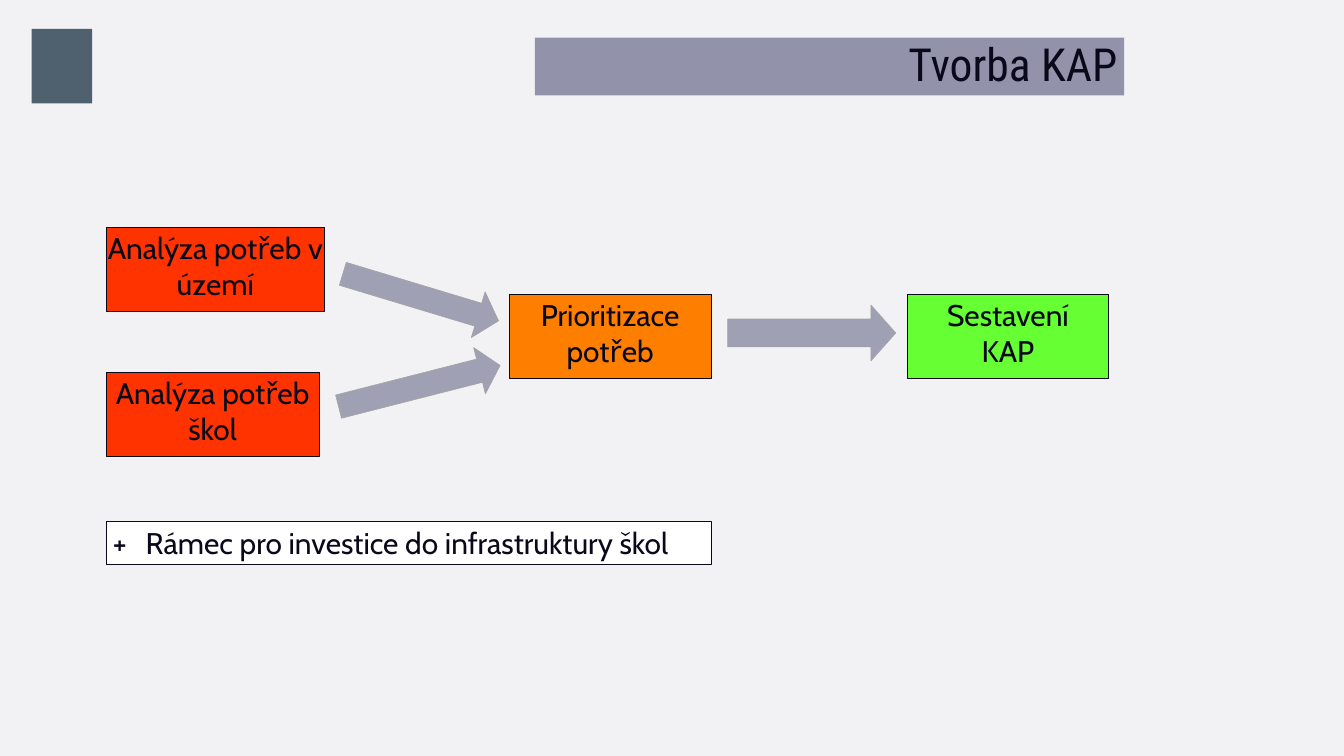
from lxml import etree
from pptx import Presentation
from pptx.dml.color import RGBColor
from pptx.enum import shapes, text
from pptx.oxml.ns import qn
from pptx.util import Inches, Pt

INK = RGBColor(0x0A, 0x09, 0x1B)
PAPER = RGBColor(0xF2, 0xF2, 0xF5)
WHITE = RGBColor(0xFF, 0xFF, 0xFF)
SLATE = RGBColor(0x4F, 0x60, 0x6E)
LAVENDER = RGBColor(0x92, 0x92, 0xAB)
RED = RGBColor(0xFF, 0x33, 0x00)
ORANGE = RGBColor(0xFE, 0x7F, 0x00)
GREEN = RGBColor(0x66, 0xFF, 0x33)
ARROW = RGBColor(0x6A, 0x6A, 0x8A)
ARROW_EDGE = RGBColor(0xA5, 0xA5, 0xA5)

LEFT, MIDDLE, RIGHT = 1.58, 7.58, 13.5
STEP_HEIGHT = 1.25
STEP_INSETS = (0, 0.04, 0, 0.01)
DEFAULT_INSETS = (0.1, 0.05, 0.1, 0.05)

# paragraphs, left, top, width, fill, line width
STEPS = [
    (["Analýza potřeb v území"], LEFT, 3.38, 3.25, RED, 1),
    (["Analýza potřeb škol"], LEFT, 5.54, 3.17, RED, 0.75),
    (["Prioritizace potřeb"], MIDDLE, 4.38, 3, ORANGE, 0.75),
    (["Sestavení", "KAP"], RIGHT, 4.38, 3, GREEN, 0.75),
]
# left, top, width, height, rotation
ARROWS = [
    (5.05, 4.07, 2.42, 0.71, 16.8),
    (5, 5.39, 2.48, 0.71, 345.7),
    (10.83, 4.54, 2.5, 0.83, 0),
]


def add_block(s, kind, box, fill, line=None, line_width=0.75):
    sp = s.shapes.add_shape(kind, *(Inches(v) for v in box))
    sp.shadow.inherit = False
    sp.fill.solid()
    sp.fill.fore_color.rgb = fill
    if line is None:
        sp.line.fill.background()
    else:
        sp.line.color.rgb = line
        sp.line.width = Pt(line_width)
    return sp


def write(sp, paragraphs, font="Cabin", size=32, align=text.PP_ALIGN.CENTER,
          anchor=text.MSO_ANCHOR.TOP, insets=DEFAULT_INSETS,
          spacing=None, before=None):
    tf = sp.text_frame
    tf.word_wrap = True
    tf.vertical_anchor = anchor
    (tf.margin_left, tf.margin_top,
     tf.margin_right, tf.margin_bottom) = (Inches(v) for v in insets)
    for i, words in enumerate(paragraphs):
        p = tf.add_paragraph() if i else tf.paragraphs[0]
        p.alignment = align
        if spacing is not None:
            p.line_spacing = spacing
        if before is not None:
            p.space_before = Pt(before)
        r = p.add_run()
        r.text = words
        r.font.name = font
        r.font.size = Pt(size)
        r.font.color.rgb = INK
    return tf


def add_tab_stop(p, position):
    tabs = etree.SubElement(p._p.get_or_add_pPr(), qn("a:tabLst"))
    etree.SubElement(tabs, qn("a:tab"), pos=str(Inches(position)), algn="l")


def set_opacity(sp, percent):
    color = sp.fill._xPr.find(qn("a:solidFill"))[0]
    etree.SubElement(color, qn("a:alpha"), val=str(percent * 1000))


def main():
    prs = Presentation()
    prs.slide_width, prs.slide_height = Inches(20), Inches(11.25)
    s = prs.slides.add_slide(prs.slide_layouts[6])
    s.background.fill.solid()
    s.background.fill.fore_color.rgb = PAPER
    rect = shapes.MSO_SHAPE.RECTANGLE

    add_block(s, rect, (0.47, 0.43, 0.9, 1.11), SLATE)  # logo placeholder

    title = add_block(s, rect, (7.96, 0.56, 8.77, 0.86), LAVENDER)
    write(title, ["Tvorba KAP"], font="Roboto Condensed", size=48.8,
          align=text.PP_ALIGN.RIGHT, anchor=text.MSO_ANCHOR.MIDDLE, spacing=0.9)

    for paragraphs, left, top, width, fill, line_width in STEPS:
        step = add_block(s, rect, (left, top, width, STEP_HEIGHT), fill,
                         INK, line_width)
        write(step, paragraphs, insets=STEP_INSETS)

    for *box, rotation in ARROWS:
        arrow = add_block(s, shapes.MSO_SHAPE.RIGHT_ARROW, box, ARROW, ARROW_EDGE)
        arrow.adjustments[1] = 0.444
        arrow.rotation = rotation
        set_opacity(arrow, 60)

    framework = add_block(s, rect, (LEFT, 7.76, 9, 0.64), WHITE, INK)
    tf = write(framework, ["+\tRámec pro investice do infrastruktury škol"],
               align=text.PP_ALIGN.LEFT, before=6)
    tf.auto_size = text.MSO_AUTO_SIZE.SHAPE_TO_FIT_TEXT
    add_tab_stop(tf.paragraphs[0], 0.49)

    prs.save("out.pptx")


if __name__ == "__main__":
    main()
